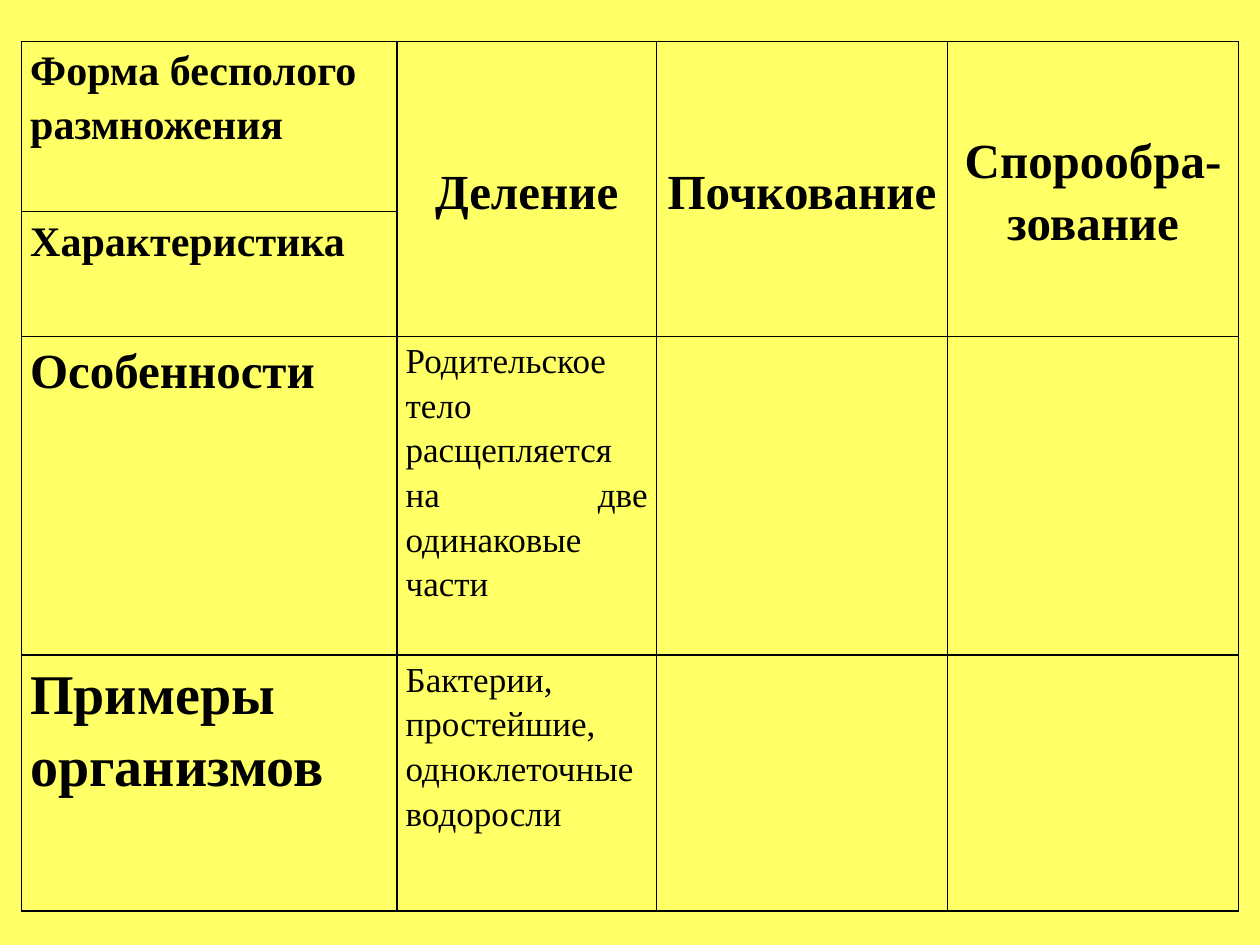
import pptx
import pptx.util
import pptx.dml.color
import pptx.enum.text
import pptx.oxml
import pptx.oxml.ns
import lxml.etree

Inches, Pt = pptx.util.Inches, pptx.util.Pt
ALIGN = pptx.enum.text.PP_ALIGN
ANCHOR = pptx.enum.text.MSO_ANCHOR

COLORS = {"background": "FFFF66", "ink": "000000"}
FONT = "Times New Roman"
LEFT, TOP = 0.17, 0.33
COL_WIDTHS = [2.98, 2.06, 2.31, 2.31]
ROW_HEIGHTS = [1.35, 0.99, 2.53, 2.03]

FORMS = ["Деление", "Почкование", "Спорообра-зование"]
# row, text, size, alignment
ROW_LABELS = [
    (0, "Форма бесполого размножения", 24, ALIGN.LEFT),
    (1, "Характеристика", 24, ALIGN.JUSTIFY),
    (2, "Особенности", 28, ALIGN.JUSTIFY),
    (3, "Примеры организмов", 32, ALIGN.JUSTIFY),
]
DIVISION_DETAILS = [
    (2, "Родительское тело расщепляется на две одинаковые части"),
    (3, "Бактерии, простейшие, одноклеточные водоросли"),
]


def rgb(name):
    return pptx.dml.color.RGBColor.from_string(COLORS[name])


def write(cell, text, size, bold=True, align=ALIGN.JUSTIFY, anchor=ANCHOR.TOP):
    cell.vertical_anchor = anchor
    p = cell.text_frame.paragraphs[0]
    p.alignment = align
    p.line_spacing = 1.15
    r = p.add_run()
    r.text = text
    r.font.name = FONT
    r.font.size = Pt(size)
    r.font.bold = bold
    r.font.color.rgb = rgb("ink")


def style_cell(cell):
    """Clear the fill, set the margins and draw a border on all four sides."""
    cell.margin_left = cell.margin_right = Inches(0.07)
    cell.margin_top = cell.margin_bottom = 0
    tc_pr = cell._tc.get_or_add_tcPr()
    qn = pptx.oxml.ns.qn
    for side in ("lnL", "lnR", "lnT", "lnB"):
        ln = lxml.etree.SubElement(tc_pr, qn(f"a:{side}"), w=str(Pt(1)))
        fill = lxml.etree.SubElement(ln, qn("a:solidFill"))
        lxml.etree.SubElement(fill, qn("a:srgbClr"), val=COLORS["ink"])
    cell.fill.background()


def main():
    prs = pptx.Presentation()
    prs.slide_width, prs.slide_height = Inches(10), Inches(7.5)
    slide = prs.slides.add_slide(prs.slide_layouts[6])
    slide.background.fill.solid()
    slide.background.fill.fore_color.rgb = rgb("background")

    table = slide.shapes.add_table(
        len(ROW_HEIGHTS), len(COL_WIDTHS), Inches(LEFT), Inches(TOP),
        Inches(sum(COL_WIDTHS)), Inches(sum(ROW_HEIGHTS))).table
    table.first_row = table.horz_banding = False
    for column, width in zip(table.columns, COL_WIDTHS):
        column.width = Inches(width)
    for row, height in zip(table.rows, ROW_HEIGHTS):
        row.height = Inches(height)
    for cell in table.iter_cells():
        style_cell(cell)

    for col, form in enumerate(FORMS, start=1):
        heading = table.cell(0, col)
        heading.merge(table.cell(1, col))
        write(heading, form, 28, align=ALIGN.CENTER, anchor=ANCHOR.MIDDLE)
    for row, text, size, align in ROW_LABELS:
        write(table.cell(row, 0), text, size, align=align)
    for row, text in DIVISION_DETAILS:
        write(table.cell(row, 1), text, 20, bold=False)

    prs.save("out.pptx")


if __name__ == "__main__":
    main()
